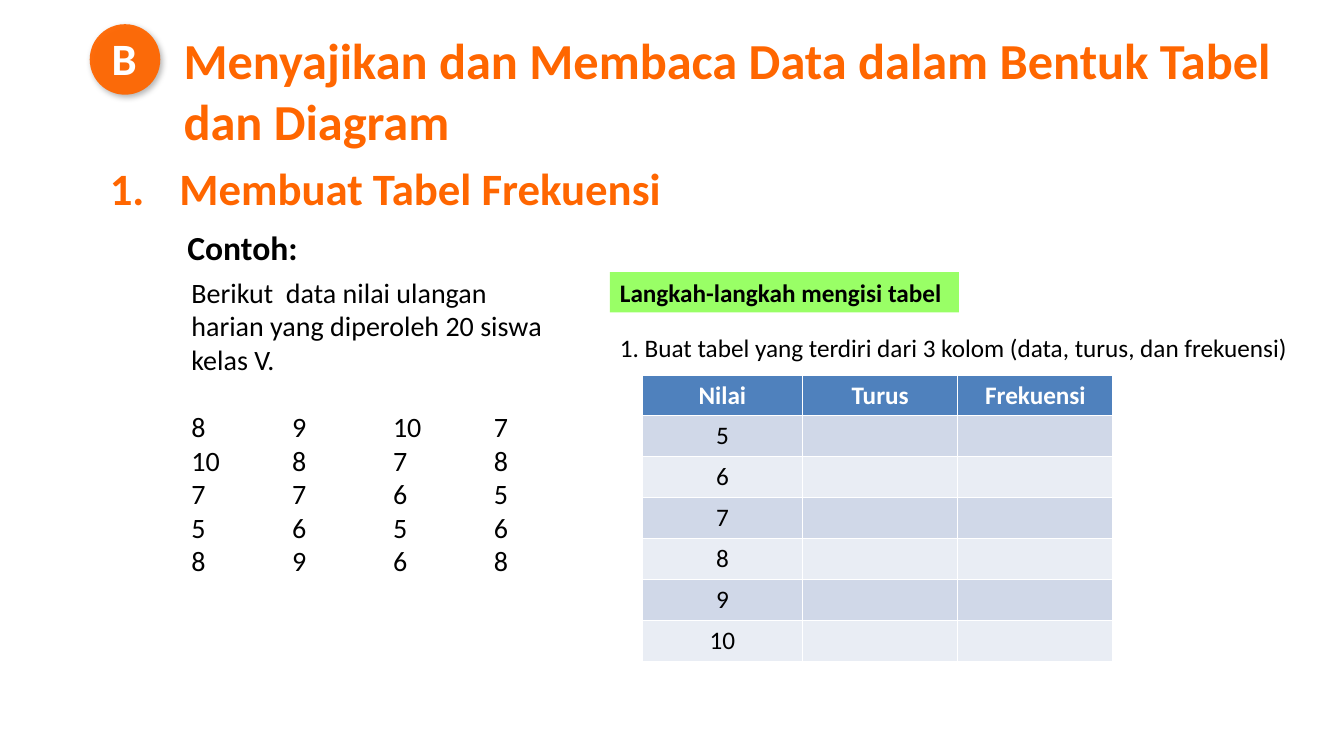
from lxml.etree import SubElement
from pptx import Presentation
from pptx.dml.color import RGBColor
from pptx.enum.shapes import MSO_SHAPE as Shape
from pptx.enum.text import MSO_ANCHOR as Anchor, MSO_AUTO_SIZE as AutoSize, PP_ALIGN as Align
from pptx.oxml.ns import qn
from pptx.util import Inches, Pt

COLORS = {
    "orange": "FF6600",
    "green": "99FF66",
    "header": "4F81BD",
    "band_dark": "D0D8E8",
    "band_light": "E9EDF4",
    "black": "000000",
    "white": "FFFFFF",
}
SCORES = [
    (8, 9, 10, 7),
    (10, 8, 7, 8),
    (7, 7, 6, 5),
    (5, 6, 5, 6),
    (8, 9, 6, 8),
]


def rgb(color):
    return RGBColor.from_string(COLORS[color])


class LessonSlide:
    font_name = "Calibri"

    def __init__(self, deck):
        self.slide = deck.slides.add_slide(deck.slide_layouts[5])

    def place(self, shape, box):
        for side, value in zip(("left", "top", "width", "height"), box):
            setattr(shape, side, Inches(value))

    def fill_text(self, frame, lines, size, color="black", bold=False, wrap=False,
                  align=Align.LEFT, tabs=()):
        layout = {"word_wrap": wrap, "auto_size": AutoSize.SHAPE_TO_FIT_TEXT,
                  "vertical_anchor": Anchor.TOP}
        for key, value in layout.items():
            setattr(frame, key, value)
        for index, line in enumerate(lines):
            paragraph = frame.add_paragraph() if index else frame.paragraphs[0]
            paragraph.text = line
            self.style(paragraph, size, color, bold, align, tabs)

    def style(self, paragraph, size, color, bold, align, tabs=()):
        if tabs:
            tab_list = SubElement(paragraph._p.get_or_add_pPr(), qn("a:tabLst"))
            for position in tabs:
                SubElement(tab_list, qn("a:tab"), pos=str(Inches(position)), algn="l")
        paragraph.alignment = align
        font_format = {"name": self.font_name, "size": Pt(size), "bold": bold}
        for key, value in font_format.items():
            setattr(paragraph.font, key, value)
        paragraph.font.color.rgb = rgb(color)

    def title(self, words, box):
        heading = self.slide.shapes.title
        self.place(heading, box)
        self.fill_text(heading.text_frame, [words], 36, "orange", True, wrap=True)

    def text(self, lines, box, size, parent=None, **style):
        shapes = (parent or self.slide).shapes
        note = shapes.add_textbox(*map(Inches, box))
        self.fill_text(note.text_frame, lines, size, **style)
        return note.text_frame

    def filled(self, kind, box, color, parent=None):
        shapes = (parent or self.slide).shapes
        block = shapes.add_shape(kind, *map(Inches, box))
        block.shadow.inherit = False
        block.fill.solid()
        block.fill.fore_color.rgb = rgb(color)
        block.line.fill.background()
        return block

    def badge(self, letter, circle_box, letter_box):
        group = self.slide.shapes.add_group_shape()
        circle = self.filled(Shape.OVAL, circle_box, "orange", group)
        properties = circle._element.spPr
        fill = properties.find(qn("a:solidFill")).find(qn("a:srgbClr"))
        SubElement(fill, qn("a:alpha"), val="95000")
        shadow = SubElement(properties.find(qn("a:effectLst")), qn("a:outerShdw"),
                            blurRad=str(Pt(4.5)), dist=str(Pt(2.6)), dir="3180000",
                            algn="ctr", rotWithShape="0")
        shade = SubElement(shadow, qn("a:srgbClr"), val=COLORS["black"])
        SubElement(shade, qn("a:alpha"), val="30000")
        self.text([letter], letter_box, 32, group, color="white", bold=True)

    def label(self, words, box):
        block = self.filled(Shape.RECTANGLE, box, "green")
        self.fill_text(block.text_frame, [words], 18, bold=True)

    def table(self, rows, box, widths):
        grid = self.slide.shapes.add_table(len(rows), len(widths), *map(Inches, box)).table
        for column, width in zip(grid.columns, widths):
            column.width = Inches(width)
        for row_index, row in enumerate(rows):
            is_header = row_index == 0
            band = "header" if is_header else ("band_light", "band_dark")[row_index % 2]
            for column_index, words in enumerate(row):
                cell = grid.cell(row_index, column_index)
                cell.fill.solid()
                cell.fill.fore_color.rgb = rgb(band)
                cell.vertical_anchor = Anchor.MIDDLE
                cell.text = words
                self.style(cell.text_frame.paragraphs[0], 18,
                           "white" if is_header else "black", is_header, Align.CENTER)


def main():
    deck = Presentation()
    deck.slide_width, deck.slide_height = Inches(13.33), Inches(7.5)
    lesson = LessonSlide(deck)
    lesson.title("Menyajikan dan Membaca Data dalam Bentuk Tabel dan Diagram",
                 (1.72, 0.24, 11.11, 1.31))
    lesson.badge("B", (0.89, 0.24, 0.7, 0.7), (1.01, 0.26, 0.45, 0.64))
    lesson.text(["1.\tMembuat Tabel Frekuensi"], (0.99, 1.55, 5.72, 0.64), 32,
                color="orange", bold=True, tabs=(0.69,))
    lesson.text(["Contoh:"], (1.76, 2.2, 1.31, 0.5), 24, bold=True)

    score_lines = ["\t".join(map(str, row)) for row in SCORES]
    example = lesson.text(
        ["Berikut  data nilai ulangan harian yang diperoleh 20 siswa kelas V.", *score_lines],
        (1.8, 2.68, 3.79, 3.13), 20, wrap=True, tabs=(1, 2, 3))
    example.paragraphs[1].space_before = Pt(24)

    lesson.label("Langkah-langkah mengisi tabel", (6.05, 2.7, 3.46, 0.4))
    lesson.text(["1. Buat tabel yang terdiri dari 3 kolom (data, turus, dan frekuensi)"],
                (6.05, 3.25, 6.9, 0.4), 18)
    frequency_rows = [("Nilai", "Turus", "Frekuensi")]
    frequency_rows += [(str(score), "", "") for score in range(5, 11)]
    lesson.table(frequency_rows, (6.37, 3.72, 4.67, 2.84), (1.59, 1.54, 1.54))
    deck.save("out.pptx")


if __name__ == "__main__":
    main()
